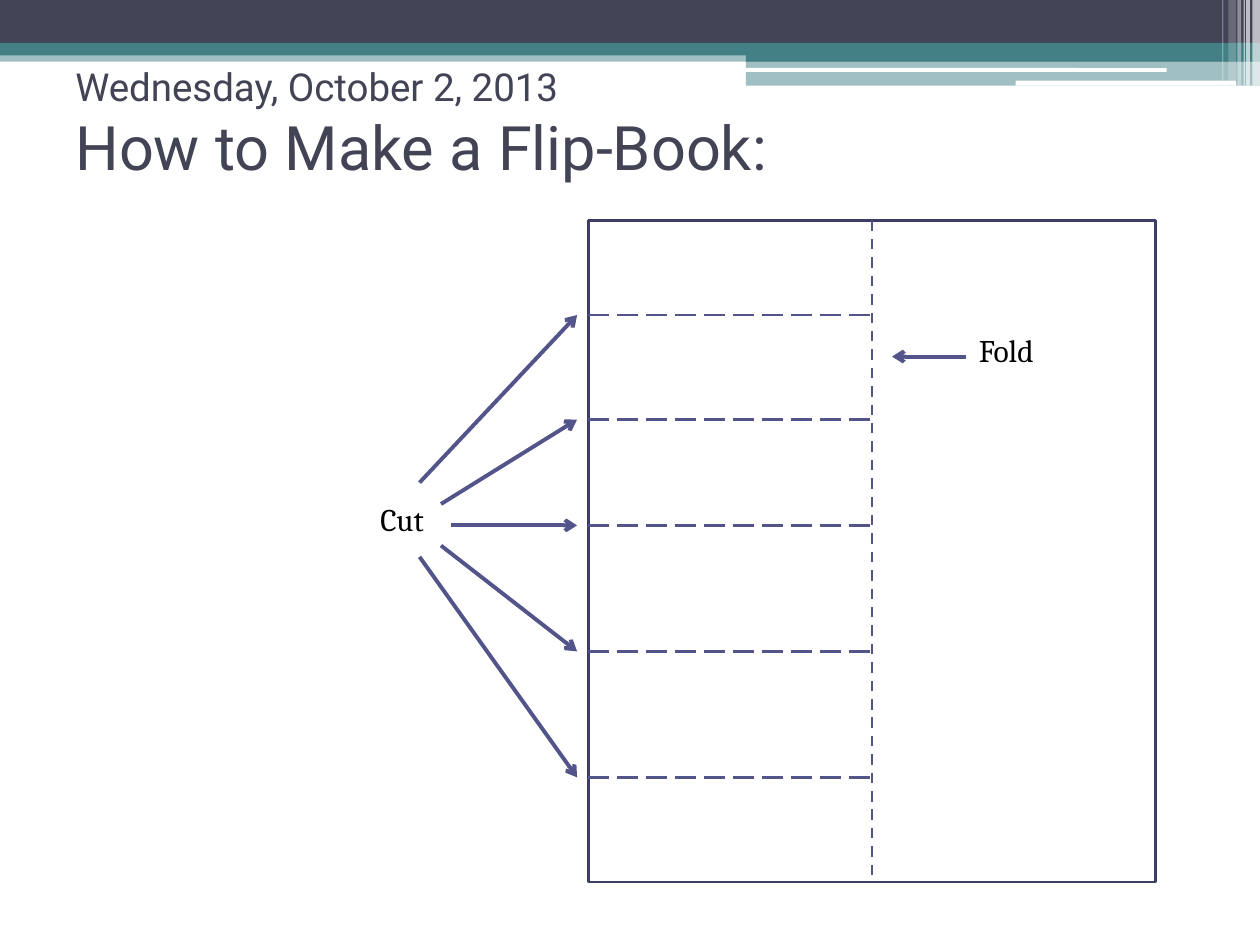
import pptx
import pptx.util
from lxml import etree
from pptx.dml.color import RGBColor
from pptx.enum.dml import MSO_LINE
from pptx.enum.shapes import MSO_CONNECTOR, MSO_SHAPE
from pptx.oxml.ns import qn
from pptx.util import Inches

NAVY = RGBColor(0x42, 0x44, 0x56)
TEAL = RGBColor(0x43, 0x80, 0x86)
WHITE = RGBColor(0xFF, 0xFF, 0xFF)
BLACK = RGBColor(0, 0, 0)
INDIGO = RGBColor(0x53, 0x54, 0x8A)
OUTLINE = RGBColor(0x3D, 0x3E, 0x66)


class FlipBookSlide:
    heading_font = "Roboto"
    label_font = "Cambria"

    def __init__(self, slide):
        self.shapes = slide.shapes

    def block(self, left, top, width, height, color, opacity=100,
              kind=MSO_SHAPE.RECTANGLE):
        """Add a borderless filled shape; opacity is a percentage."""
        shape = self.shapes.add_shape(
            kind, Inches(left), Inches(top), Inches(width), Inches(height))
        shape.shadow.inherit = False
        shape.fill.solid()
        shape.fill.fore_color.rgb = color
        shape.line.fill.background()
        if opacity < 100:
            color_node = shape.fill._xPr.find(qn("a:solidFill"))[0]
            etree.SubElement(color_node, qn("a:alpha"), val=str(opacity * 1000))
        return shape

    def sheet(self, left, top, width, height):
        page = self.block(left, top, width, height, WHITE)
        page.line.color.rgb = OUTLINE
        page.line.width = pptx.util.Pt(1.5)
        return page

    def line(self, start, end, weight=1.5, dash=None, arrow=False):
        connector = self.shapes.add_connector(
            MSO_CONNECTOR.STRAIGHT, *map(Inches, start + end))
        connector.line.color.rgb = INDIGO
        connector.line.width = pptx.util.Pt(weight)
        if dash:
            connector.line.dash_style = dash
        if arrow:
            etree.SubElement(connector.line._get_or_add_ln(),
                             qn("a:tailEnd"), type="arrow")
        etree.SubElement(connector._element.spPr, qn("a:effectLst"))
        return connector

    def arrow(self, start, end):
        return self.line(start, end, weight=2.25, arrow=True)

    def text(self, left, top, width, height, content, sizes, font, color):
        """Add a text box; sizes holds one point size per line of content."""
        box = self.shapes.add_textbox(
            Inches(left), Inches(top), Inches(width), Inches(height))
        box.text_frame.word_wrap = True
        paragraph = box.text_frame.paragraphs[0]
        paragraph.text = content
        for run, size in zip(paragraph.runs, sizes):
            run.font.name = font
            run.font.size = pptx.util.Pt(size)
            run.font.color.rgb = color
        return box

    def title(self, content, sizes):
        box = self.text(0.5, 0.42, 9, 1.17, content, sizes,
                        self.heading_font, NAVY)
        box.text_frame.margin_top = Inches(0.08)

    def label(self, left, top, content):
        self.text(left, top, 0.92, 0.4, content, [18], self.label_font, BLACK)


def draw_banner(page):
    for bar in [
        (0, 0.4, 10, 0.09, TEAL, 50),
        (0, 0, 10, 0.34, NAVY),
        (0, 0.34, 10, 0.1, TEAL),
        (5.92, 0.39, 4.08, 0.1, TEAL),
        (5.92, 0.48, 4.08, 0.2, TEAL, 50),
    ]:
        page.block(*bar)
    for left, top, width, height in [(5.91, 0.54, 3.35, 0.03),
                                     (8.06, 0.64, 1.75, 0.04)]:
        page.block(left, top, width, height, WHITE,
                   kind=MSO_SHAPE.ROUNDED_RECTANGLE)
    for left, width, height, opacity in [
        (9.94, 0.06, 0.68, 65),
        (9.89, 0.03, 0.68, 65),
        (9.87, 0.01, 0.68, 60),
        (9.82, 0.03, 0.68, 40),
        (9.75, 0.06, 0.64, 20),
        (9.7, 0.01, 0.64, 30),
    ]:
        page.block(left, 0, width, height, WHITE, opacity)


def draw_flip_book(page):
    left, top, width, height = 4.67, 1.75, 4.5, 5.25
    fold_x = left + width / 2
    sheet = page.sheet(left, top, width, height)
    fold = page.line((fold_x, top), (fold_x, top + height), dash=MSO_LINE.DASH)
    fold.begin_connect(sheet, 0)
    fold.end_connect(sheet, 2)
    page.label(7.67, 2.58, "Fold")
    page.arrow((7.67, 2.83), (7.08, 2.83))

    page.label(2.92, 3.92, "Cut")
    arrow_starts = [(3.33, 3.83), (3.5, 4), (3.58, 4.17), (3.5, 4.33), (3.33, 4.42)]
    cut_heights = [2.5, 3.33, 4.17, 5.17, 6.17]
    for start, cut_y in zip(arrow_starts, cut_heights):
        page.line((left, cut_y), (fold_x, cut_y), dash=MSO_LINE.LONG_DASH)
        page.arrow(start, (4.58, cut_y))


def main():
    deck = pptx.Presentation()
    deck.slide_width, deck.slide_height = Inches(10), Inches(7.5)
    page = FlipBookSlide(deck.slides.add_slide(deck.slide_layouts[6]))
    draw_banner(page)
    page.title("Wednesday, October 2, 2013 \vHow to Make a Flip-Book:", [22, 35])
    draw_flip_book(page)
    deck.save("out.pptx")


if __name__ == "__main__":
    main()
